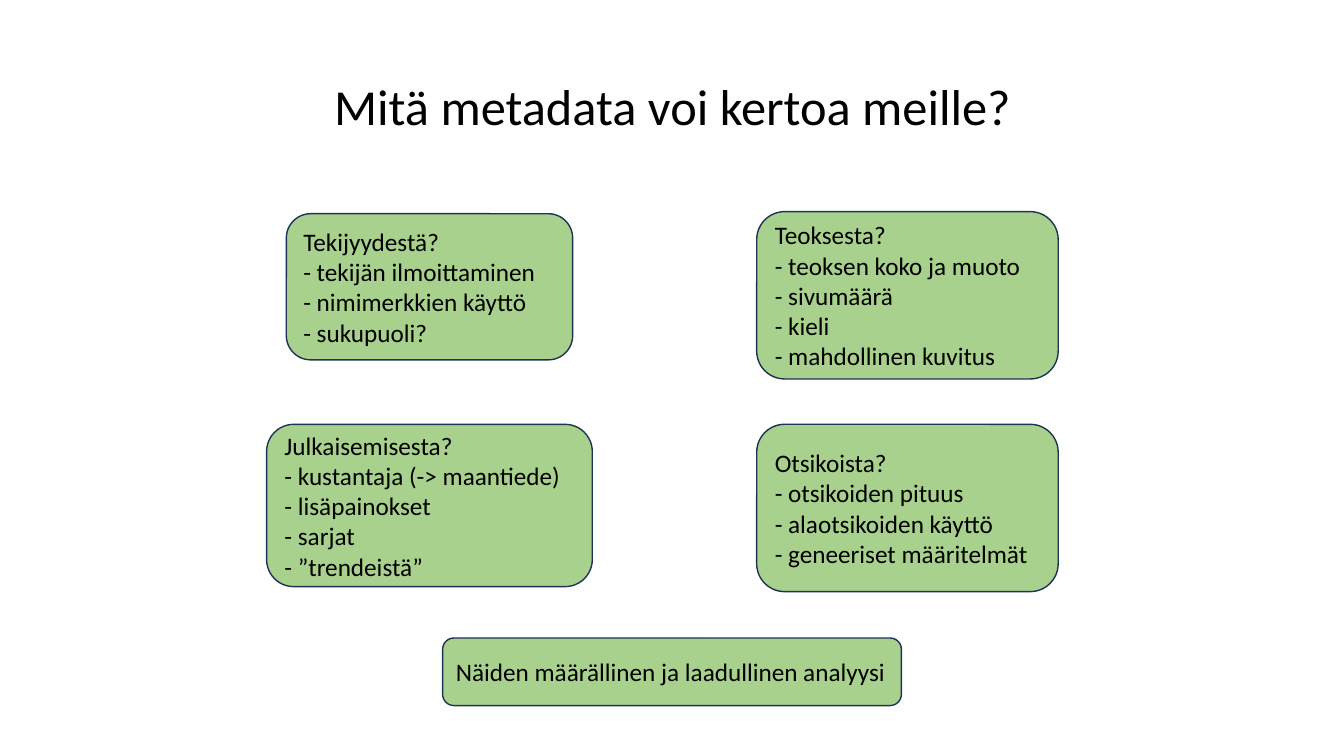
from pptx import Presentation
from pptx.dml.color import RGBColor
from pptx.enum.shapes import MSO_SHAPE
from pptx.enum.text import MSO_ANCHOR, PP_ALIGN
from pptx.util import Inches, Pt

ROUNDED = MSO_SHAPE.ROUNDED_RECTANGLE
MIDDLE = MSO_ANCHOR.MIDDLE
LEFT, CENTER = PP_ALIGN.LEFT, PP_ALIGN.CENTER
SLIDE_WIDTH, SLIDE_HEIGHT = 13.33, 7.5
LEFT_COLUMN, MIDDLE_COLUMN, RIGHT_COLUMN = 4.26, SLIDE_WIDTH / 2, 9.0
TOP_ROW, LOWER_ROW, BOTTOM_ROW = 2.1, 4.21, 6.33


def color(hex_string):
    return RGBColor.from_string(hex_string)


def write(frame, text, size=18, align=LEFT, spacing=1.0):
    frame.word_wrap = True
    frame.vertical_anchor = MIDDLE
    frame.text = text
    for paragraph in frame.paragraphs:
        paragraph.alignment = align
        paragraph.line_spacing = spacing
        paragraph.font.size = Pt(size)
        paragraph.font.name = "Calibri"
        paragraph.font.color.rgb = color("000000")


deck = Presentation()
deck.slide_width = Inches(SLIDE_WIDTH)
deck.slide_height = Inches(SLIDE_HEIGHT)
slide = deck.slides.add_slide(deck.slide_layouts[5])

heading = slide.shapes.title
heading.left, heading.top = Inches(0.92), Inches(0.36)
heading.width, heading.height = Inches(11.5), Inches(1.45)
write(heading.text_frame, "Mitä metadata voi kertoa meille?", size=36, align=CENTER, spacing=0.9)

topics = [
    (LEFT_COLUMN, TOP_ROW + 0.02, 2.84, 1.45,
     ["Tekijyydestä?", "tekijän ilmoittaminen", "nimimerkkien käyttö", "sukupuoli?"]),
    (RIGHT_COLUMN, TOP_ROW, 2.99, 1.66,
     ["Teoksesta?", "teoksen koko ja muoto", "sivumäärä", "kieli", "mahdollinen kuvitus"]),
    (LEFT_COLUMN, LOWER_ROW, 3.23, 1.61,
     ["Julkaisemisesta?", "kustantaja (-> maantiede)", "lisäpainokset", "sarjat", "”trendeistä”"]),
    (RIGHT_COLUMN, LOWER_ROW, 2.99, 1.66,
     ["Otsikoista?", "otsikoiden pituus", "alaotsikoiden käyttö", "geneeriset määritelmät"]),
    (MIDDLE_COLUMN, BOTTOM_ROW, 4.55, 0.67,
     ["Näiden määrällinen ja laadullinen analyysi"]),
]

for center, top, width, height, lines in topics:
    topic = slide.shapes.add_shape(
        ROUNDED, Inches(center - width / 2), Inches(top), Inches(width), Inches(height))
    topic.shadow.inherit = False
    topic.fill.solid()
    topic.fill.fore_color.rgb = color("A9D18E")
    topic.line.color.rgb = color("1E3256")
    topic.line.width = Pt(1)
    write(topic.text_frame, "\n- ".join(lines))

deck.save("out.pptx")
